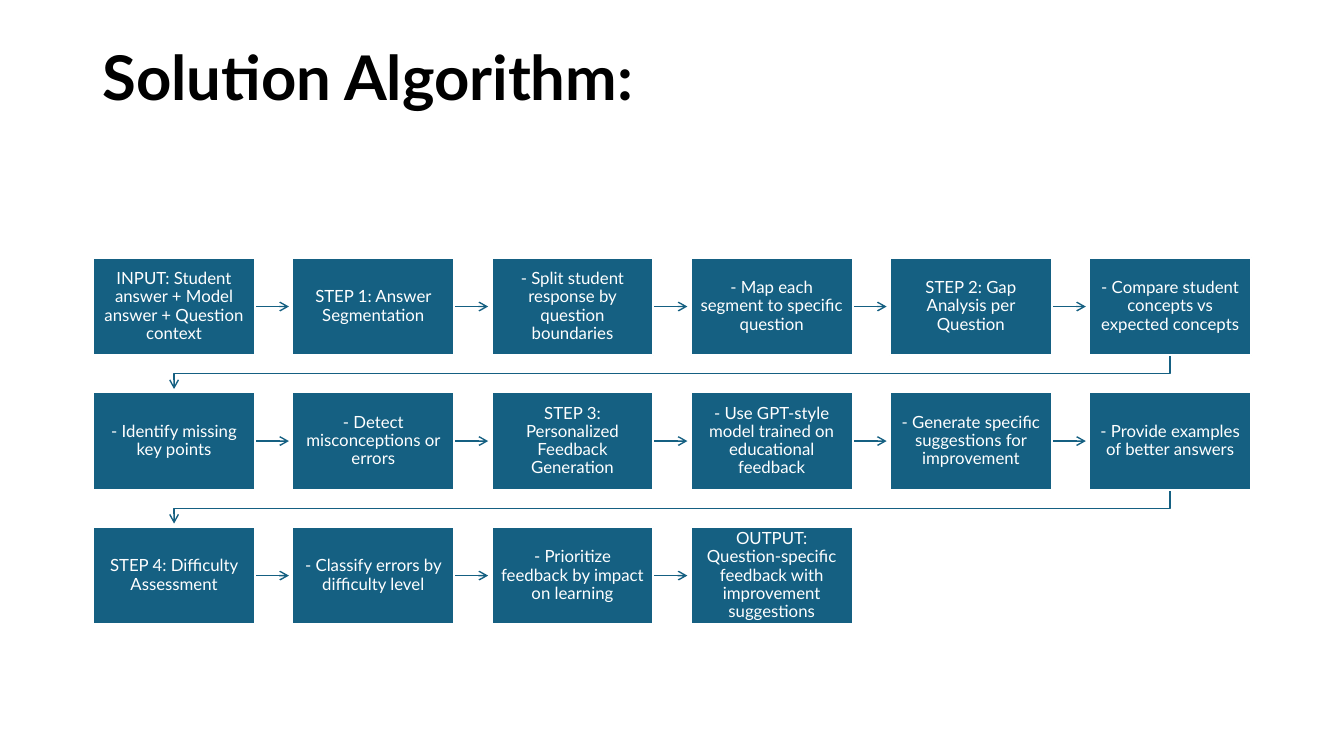
from dataclasses import dataclass

from lxml.etree import SubElement
from pptx import Presentation
from pptx.dml.color import RGBColor as Color
from pptx.enum.shapes import MSO_CONNECTOR as Connector, MSO_SHAPE as Shape
from pptx.enum.text import MSO_ANCHOR as Anchor, PP_ALIGN as Align
from pptx.oxml.ns import qn
from pptx.util import Pt

TITLE = "Solution Algorithm:"
STEPS = [
    "INPUT: Student answer + Model answer + Question context",
    "STEP 1: Answer Segmentation",
    "- Split student response by question boundaries",
    "- Map each segment to specific question",
    "STEP 2: Gap Analysis per Question",
    "- Compare student concepts vs expected concepts",
    "- Identify missing key points",
    "- Detect misconceptions or errors",
    "STEP 3: Personalized Feedback Generation",
    "- Use GPT-style model trained on educational feedback",
    "- Generate specific suggestions for improvement",
    "- Provide examples of better answers",
    "STEP 4: Difficulty Assessment",
    "- Classify errors by difficulty level",
    "- Prioritize feedback by impact on learning",
    "OUTPUT: Question-specific feedback with improvement suggestions",
]


@dataclass(frozen=True)
class Theme:
    font: str = "Lato"
    title_size: float = 44
    step_size: float = 12
    ink: Color = Color(0, 0, 0)
    teal: Color = Color(0x15, 0x60, 0x82)
    white: Color = Color(255, 255, 255)


THEME = Theme()
COLUMNS = 6
LEFT, TOP = Pt(66.5), Pt(184.2)
WIDTH, HEIGHT, GAP = Pt(115.7), Pt(69.5), Pt(26.6)
ARROW_LENGTH = Pt(24.2)
INSET = Pt(5.7)


def style_paragraph(para, size, color):
    para.line_spacing = 0.9
    para.font.name = THEME.font
    para.font.size = Pt(size)
    para.font.color.rgb = color


def add_title(slide):
    title = slide.shapes.title
    title.left, title.top, title.width, title.height = Pt(66), Pt(28.8), Pt(828), Pt(104.4)
    frame = title.text_frame
    frame.text = TITLE
    frame.vertical_anchor = Anchor.TOP
    frame.margin_top = Pt(4.7)
    para = frame.paragraphs[0]
    para.alignment = Align.LEFT
    style_paragraph(para, THEME.title_size, THEME.ink)
    para.font.bold = True


def add_step(slide, index, text):
    row, column = divmod(index, COLUMNS)
    box = slide.shapes.add_shape(
        Shape.RECTANGLE, LEFT + column * (WIDTH + GAP), TOP + row * (HEIGHT + GAP), WIDTH, HEIGHT)
    box.shadow.inherit = False
    box.fill.solid()
    box.fill.fore_color.rgb = THEME.teal
    box.line.color.rgb = THEME.white
    box.line.width = Pt(1.5)
    frame = box.text_frame
    frame.word_wrap = True
    frame.vertical_anchor = Anchor.MIDDLE
    frame.margin_left = frame.margin_right = frame.margin_top = frame.margin_bottom = INSET
    frame.text = text
    para = frame.paragraphs[0]
    para.alignment = Align.CENTER
    style_paragraph(para, THEME.step_size, THEME.white)
    return box


def style_arrow(arrow):
    arrow.line.color.rgb = THEME.teal
    arrow.line.width = Pt(1)
    SubElement(arrow.line._get_or_add_ln(), qn("a:tailEnd"), type="arrow")


def add_forward_arrow(slide, box):
    start, middle = box.left + box.width, box.top + box.height // 2
    arrow = slide.shapes.add_connector(
        Connector.STRAIGHT, start, middle, start + ARROW_LENGTH, middle)
    arrow.begin_connect(box, 3)
    style_arrow(arrow)
    SubElement(arrow.element.spPr, qn("a:effectLst"))
    return arrow


def add_return_arrow(slide, box, next_box):
    """Run from below the last box of a row to above the first box of the next."""
    start_x = box.left + box.width // 2
    end_x = next_box.left + next_box.width // 2
    start_y = box.top + box.height
    turn_y = start_y + GAP // 2
    builder = slide.shapes.build_freeform(start_x, start_y)
    builder.add_line_segments(
        [(start_x, turn_y), (end_x, turn_y), (end_x, start_y + ARROW_LENGTH)], close=False)
    arrow = builder.convert_to_shape()
    arrow.fill.background()
    style_arrow(arrow)
    arrow.shadow.inherit = False
    return arrow


def main():
    deck = Presentation()
    deck.slide_width, deck.slide_height = Pt(960), Pt(540)
    slide = deck.slides.add_slide(deck.slide_layouts[5])
    add_title(slide)
    boxes = [add_step(slide, index, text) for index, text in enumerate(STEPS)]
    for box, next_box in zip(boxes, boxes[1:]):
        if next_box.top == box.top:
            arrow = add_forward_arrow(slide, box)
        else:
            arrow = add_return_arrow(slide, box, next_box)
        box.element.addprevious(arrow.element)  # the box border covers the arrow's start
    deck.save("out.pptx")


if __name__ == "__main__":
    main()
